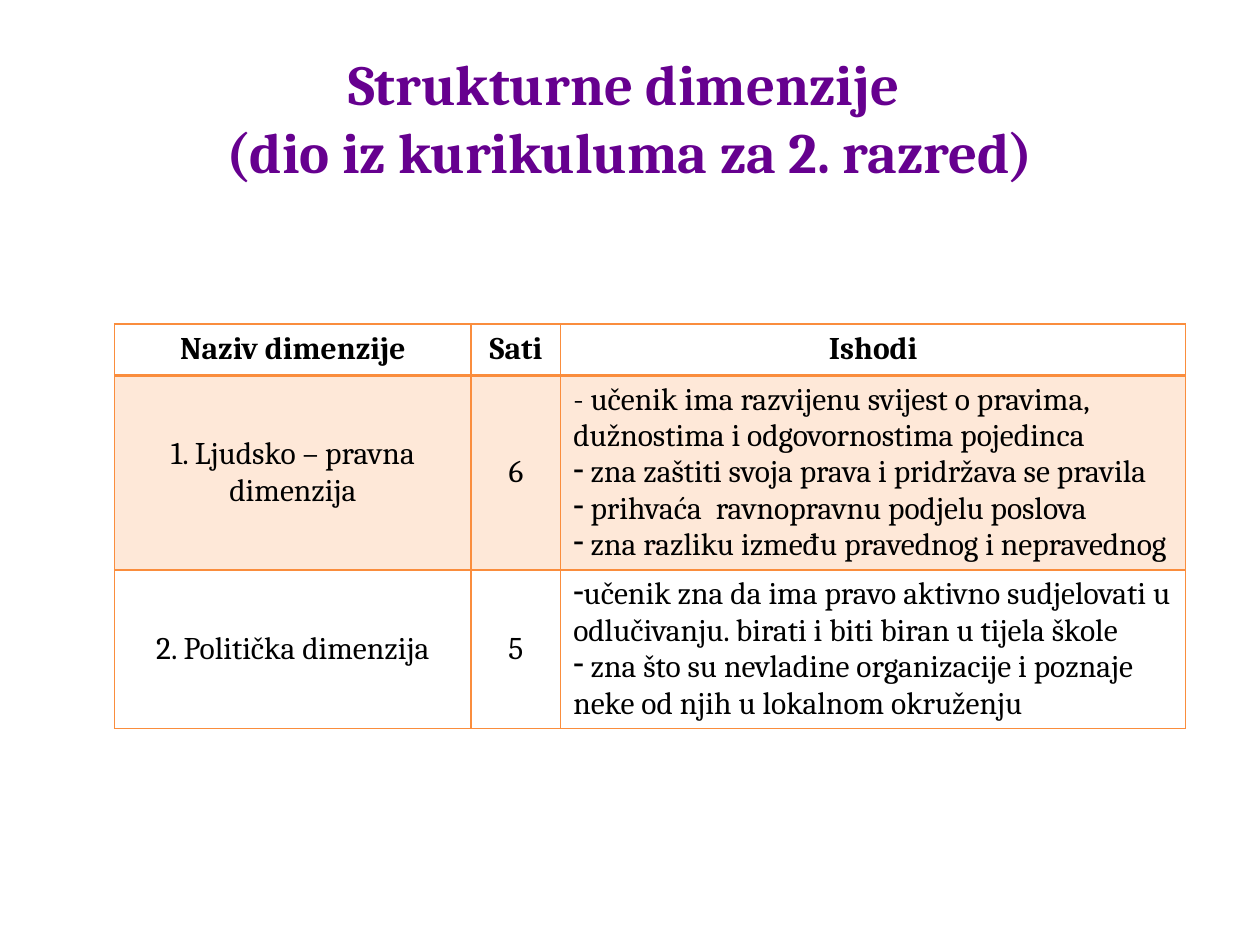
from dataclasses import dataclass

import lxml.etree
import pptx
import pptx.dml.color
import pptx.enum.text
import pptx.oxml.ns
import pptx.util

Inches = pptx.util.Inches
Pt = pptx.util.Pt
ALIGN = pptx.enum.text.PP_ALIGN
MIDDLE = pptx.enum.text.MSO_ANCHOR.MIDDLE
qn = pptx.oxml.ns.qn

COLORS = {"title": "66008F", "text": "000000", "accent": "FA8D3D"}
FONT = "Cambria"
COLUMN_WIDTHS = (2.83, 0.71, 4.96)


@dataclass
class Line:
    text: str
    dashed: bool = False


@dataclass
class Dimension:
    name: str
    hours: str
    outcomes: list[Line]
    height: float
    header: bool = False
    shaded: bool = False


DIMENSIONS = [
    Dimension("Naziv dimenzije", "Sati", [Line("Ishodi")], 0.41, header=True),
    Dimension("1. Ljudsko – pravna dimenzija", "6", [
        Line("- učenik ima razvijenu svijest o pravima, dužnostima i odgovornostima pojedinca"),
        Line(" zna zaštiti svoja prava i pridržava se pravila", True),
        Line(" prihvaća  ravnopravnu podjelu poslova", True),
        Line(" zna razliku između pravednog i nepravednog", True),
    ], 1.54, shaded=True),
    Dimension("2. Politička dimenzija", "5", [
        Line("učenik zna da ima pravo aktivno sudjelovati u odlučivanju. "
             "birati i biti biran u tijela škole", True),
        Line(" zna što su nevladine organizacije i poznaje "
             "neke od njih u lokalnom okruženju", True),
    ], 1.26),
]


def add_run(paragraph, text: str, size: float, color: str, bold: bool) -> None:
    run = paragraph.add_run()
    run.text = text
    run.font.name = FONT
    run.font.size = Pt(size)
    run.font.bold = bold
    run.font.color.rgb = pptx.dml.color.RGBColor.from_string(COLORS[color])


def set_borders(cell, widths: dict[str, float]) -> None:
    properties = cell._tc.get_or_add_tcPr()
    for side, width in widths.items():
        border = lxml.etree.SubElement(properties, qn(f"a:ln{side}"), w=str(Pt(width)))
        fill = lxml.etree.SubElement(border, qn("a:solidFill"))
        lxml.etree.SubElement(fill, qn("a:srgbClr"), val=COLORS["accent"])


def set_fill(cell, shaded: bool) -> None:
    if not shaded:
        cell.fill.background()
        return
    cell.fill.solid()
    cell.fill.fore_color.rgb = pptx.dml.color.RGBColor.from_string(COLORS["accent"])
    tint = cell._tc.tcPr.find(f".//{qn('a:solidFill')}[last()]/{qn('a:srgbClr')}")
    tint = cell._tc.tcPr.find(qn("a:solidFill")).find(qn("a:srgbClr"))
    lxml.etree.SubElement(tint, qn("a:alpha"), val="20000")


def add_dash(paragraph) -> None:
    properties = paragraph._p.get_or_add_pPr()
    properties.set("marL", "0")
    properties.set("indent", "0")
    lxml.etree.SubElement(properties, qn("a:buChar"), char="-")


def write_cell(cell, lines: list[Line], centered: bool, bold: bool) -> None:
    cell.vertical_anchor = MIDDLE
    frame = cell.text_frame
    for index, line in enumerate(lines):
        paragraph = frame.add_paragraph() if index else frame.paragraphs[0]
        paragraph.alignment = ALIGN.CENTER if centered else ALIGN.LEFT
        if line.dashed:
            add_dash(paragraph)
        add_run(paragraph, line.text, 18, "text", bold)


def add_title(slide) -> None:
    title = slide.shapes.title
    title.left, title.top = Inches(0.5), Inches(0.3)
    title.width, title.height = Inches(9), Inches(1.25)
    title.text_frame.vertical_anchor = MIDDLE
    heading = title.text_frame.paragraphs[0]
    heading.alignment = ALIGN.CENTER
    add_run(heading, "Strukturne dimenzije ", 32.4, "title", True)
    heading.add_line_break()
    add_run(heading, "(dio iz kurikuluma za 2. razred)", 32.4, "title", True)


def add_dimension_table(slide) -> None:
    table = slide.shapes.add_table(
        len(DIMENSIONS), len(COLUMN_WIDTHS), Inches(0.91), Inches(2.57),
        Inches(sum(COLUMN_WIDTHS)), Inches(sum(d.height for d in DIMENSIONS)),
    ).table
    table.first_row = table.horz_banding = False
    for column, width in zip(table.columns, COLUMN_WIDTHS):
        column.width = Inches(width)
    for index, dimension in enumerate(DIMENSIONS):
        table.rows[index].height = Inches(dimension.height)
        top = 2 if index == 1 else 1
        bottom = 2 if dimension.header else 1
        contents = ([Line(dimension.name)], [Line(dimension.hours)], dimension.outcomes)
        for column, lines in enumerate(contents):
            cell = table.cell(index, column)
            set_borders(cell, {"L": 1, "R": 1, "T": top, "B": bottom})
            set_fill(cell, dimension.shaded)
            write_cell(cell, lines, dimension.header or column < 2, dimension.header)


def main() -> None:
    presentation = pptx.Presentation()
    presentation.slide_width, presentation.slide_height = Inches(10), Inches(7.5)
    slide = presentation.slides.add_slide(presentation.slide_layouts[5])
    add_title(slide)
    add_dimension_table(slide)
    presentation.save("out.pptx")


if __name__ == "__main__":
    main()
